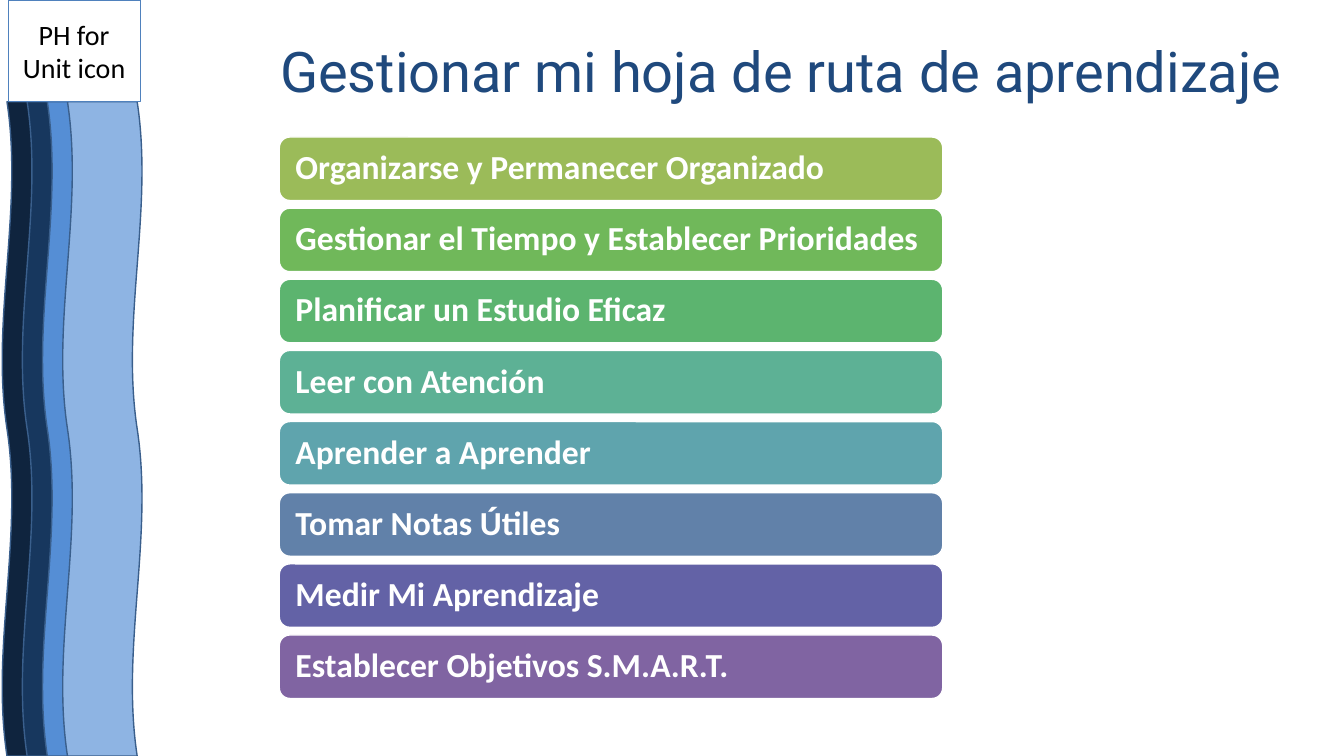
"""Build the slide that lists the steps of a learning road map."""
from pptx import Presentation
from pptx.dml.color import RGBColor as RGB
from pptx.enum.shapes import MSO_SHAPE as Shape
from pptx.enum.text import MSO_ANCHOR as Anchor, PP_ALIGN as Align
from pptx.util import Inches, Pt

COLORS = {
    "white": "FFFFFF", "black": "000000", "title": "1F497D",
    "frame": "4F81BD", "edge": "3A5F8C",
    "night": "0F243E", "navy": "17375E", "blue": "558ED5", "sky": "8EB4E3",
    "olive": "9BBB59", "leaf": "70B85A", "green": "5CB46F", "mint": "5DB195",
    "teal": "5FA4AD", "steel": "6181A9", "indigo": "6362A6", "purple": "8064A2",
}
STEPS = [
    ("Organizarse y Permanecer Organizado", "olive"),
    ("Gestionar el Tiempo y Establecer Prioridades", "leaf"),
    ("Planificar un Estudio Eficaz", "green"),
    ("Leer con Atención", "mint"),
    ("Aprender a Aprender", "teal"),
    ("Tomar Notas Útiles", "steel"),
    ("Medir Mi Aprendizaje", "indigo"),
    ("Establecer Objetivos S.M.A.R.T.", "purple"),
]


def draw(kind, left, top, width, height, fill, line, weight):
    """Add a preset shape; a fill of None leaves it open."""
    shape = slide.shapes.add_shape(
        kind, Inches(left), Inches(top), Inches(width), Inches(height))
    shape.shadow.inherit = False
    if fill:
        shape.fill.solid()
        shape.fill.fore_color.rgb = RGB.from_string(COLORS[fill])
    else:
        shape.fill.background()
    shape.line.color.rgb = RGB.from_string(COLORS[line])
    shape.line.width = Pt(weight)
    return shape


def write(shape, text, size, color, face="Calibri", bold=False,
          align=Align.LEFT, inset=0.1, lead=0.9):
    """Put one formatted paragraph into a shape."""
    frame = shape.text_frame
    frame.word_wrap = True
    frame.vertical_anchor = Anchor.MIDDLE
    frame.margin_left = frame.margin_right = Inches(inset)
    frame.margin_top = frame.margin_bottom = Inches(0.05)
    frame.text = text
    para = frame.paragraphs[0]
    para.alignment = align
    para.line_spacing = lead
    font = para.runs[0].font
    font.name = face
    font.size = Pt(size)
    font.bold = bold
    font.color.rgb = RGB.from_string(COLORS[color])


deck = Presentation()
deck.slide_width, deck.slide_height = Inches(13.33), Inches(7.5)
slide = deck.slides.add_slide(deck.slide_layouts[6])
slide.background.fill.solid()
slide.background.fill.fore_color.rgb = RGB.from_string(COLORS["white"])

for i, tint in enumerate(["night", "navy", "blue", "sky"]):
    wave = draw(Shape.DOUBLE_WAVE, -2.83 + 0.2 * i, 3.86, 6.49, 0.79,
                tint, "edge", 1)
    wave.rotation = 270

icon = draw(Shape.RECTANGLE, 0.08, 0, 1.31, 1.01, None, "frame", 0.75)
write(icon, "PH for Unit icon", 20, "black", align=Align.CENTER, lead=1.0)

title = slide.shapes.add_textbox(
    Inches(2.68), Inches(0.33), Inches(10.29), Inches(0.81))
write(title, "Gestionar mi hoja de ruta de aprendizaje", 40, "title", "Roboto")

first, last = 1.36, 6.3
pitch = (last - first) / (len(STEPS) - 1)
for i, (text, tint) in enumerate(STEPS):
    bar = draw(Shape.ROUNDED_RECTANGLE, 2.77, first + pitch * i, 6.58, 0.63,
               tint, "white", 1)
    write(bar, text, 24, "white", bold=True, inset=0.13)

deck.save("out.pptx")
